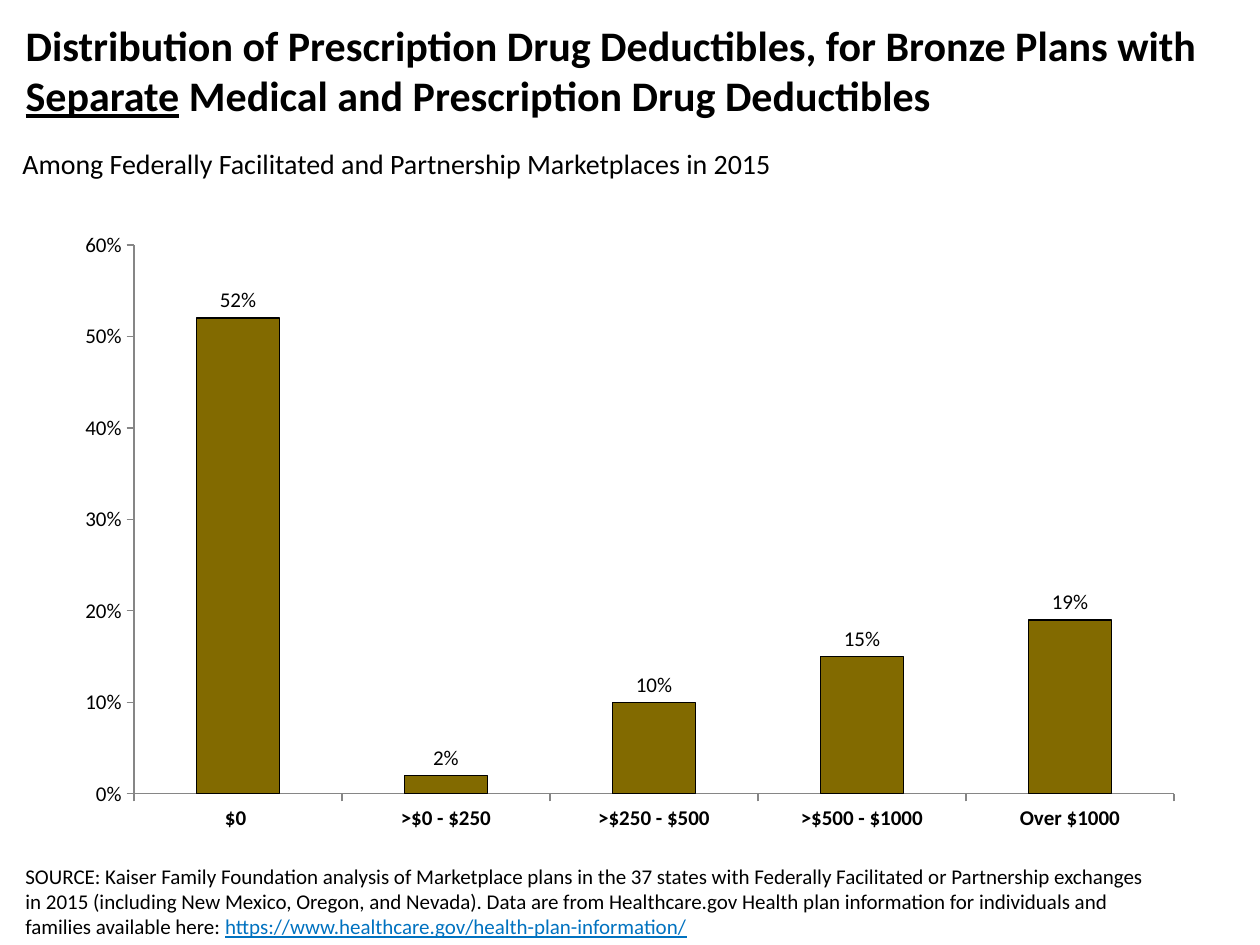
import pptx
import pptx.chart.data
import pptx.dml.color
import pptx.enum.chart
import pptx.enum.text
import pptx.oxml
import pptx.oxml.ns
import pptx.util
from dataclasses import dataclass

# Content: each text is a list of (words, style) runs
TITLE = [
    ("Distribution of Prescription Drug Deductibles, for Bronze Plans with ", ""),
    ("Separate", "underline"),
    (" Medical and Prescription Drug Deductibles", ""),
]
SUBTITLE = [("Among Federally Facilitated and Partnership Marketplaces in 2015", "")]
SOURCE = [
    ("SOURCE: Kaiser Family Foundation analysis of Marketplace plans in the 37 states "
     "with Federally Facilitated or Partnership exchanges in 2015 (including New Mexico, "
     "Oregon, and Nevada). Data are from Healthcare.gov Health plan information for "
     "individuals and families available here: ", ""),
    ("https://www.healthcare.gov/health-plan-information/", "link"),
]
DEDUCTIBLE_SHARES = {
    "$0 ": 0.52,
    ">$0 - $250": 0.02,
    ">$250 - $500": 0.10,
    ">$500 - $1000": 0.15,
    "Over $1000": 0.19,
}

# Boxes in px: left, top, width, height
SLIDE_SIZE = (1260, 945)
TITLE_BOX = (13, 13, 1235, 126)
SUBTITLE_BOX = (10, 140, 789, 47)
CHART_BOX = (63, 220, 1134, 624)
PLOT_BOX = (134, 245, 1040, 549)
SOURCE_BOX = (13, 857, 1147, 76)
EMU_PER_PX = 914400 // 126


@dataclass(frozen=True)
class Theme:
    font: str = "Calibri"
    text: str = "000000"
    link: str = "0072C0"
    bar: str = "826A00"
    axis: str = "868686"
    title_size: int = 24
    subtitle_size: int = 16
    small_size: int = 12


THEME = Theme()


def emu(box):
    return [pptx.util.Emu(length * EMU_PER_PX) for length in box]


def rgb(color):
    return pptx.dml.color.RGBColor.from_string(color)


def style_font(font, size, bold=False, color=THEME.text):
    font.name = THEME.font
    font.size = pptx.util.Pt(size)
    font.bold = bold
    font.color.rgb = rgb(color)


def write_text(shape, runs, size, bold=False, wrap=True):
    frame = shape.text_frame
    frame.word_wrap = wrap
    frame.auto_size = pptx.enum.text.MSO_AUTO_SIZE.NONE
    frame.vertical_anchor = pptx.enum.text.MSO_ANCHOR.TOP
    paragraph = frame.paragraphs[0]
    paragraph.alignment = pptx.enum.text.PP_ALIGN.LEFT
    for words, style in runs:
        run = paragraph.add_run()
        run.text = words
        style_font(run.font, size, bold, THEME.link if style == "link" else THEME.text)
        run.font.underline = bool(style)


def place_plot(chart):
    """Fix the inner plot area as fractions of the chart frame."""
    left, top, width, height = CHART_BOX
    fractions = {
        "x": (PLOT_BOX[0] - left) / width,
        "y": (PLOT_BOX[1] - top) / height,
        "w": PLOT_BOX[2] / width,
        "h": PLOT_BOX[3] / height,
    }
    settings = [("layoutTarget", "inner"), ("xMode", "edge"), ("yMode", "edge")]
    settings += [(name, f"{value:.4f}") for name, value in fractions.items()]
    children = "".join(f'<c:{name} val="{value}"/>' for name, value in settings)
    layout = pptx.oxml.parse_xml(
        f'<c:layout {pptx.oxml.ns.nsdecls("c")}>'
        f"<c:manualLayout>{children}</c:manualLayout></c:layout>")
    plot_area = chart.plots[0]._element.getparent()
    for old in plot_area.findall(pptx.oxml.ns.qn("c:layout")):
        plot_area.remove(old)
    plot_area.insert(0, layout)


def add_deductible_chart(slide):
    data = pptx.chart.data.CategoryChartData(number_format="0%")
    data.categories = list(DEDUCTIBLE_SHARES)
    data.add_series("Series 1", list(DEDUCTIBLE_SHARES.values()))
    chart = slide.shapes.add_chart(
        pptx.enum.chart.XL_CHART_TYPE.COLUMN_CLUSTERED, *emu(CHART_BOX), data).chart
    chart.has_legend = False
    chart.has_title = False
    style_font(chart.font, THEME.small_size)

    # Axes
    for axis, bold in ((chart.category_axis, True), (chart.value_axis, False)):
        axis.has_major_gridlines = False
        axis.major_tick_mark = pptx.enum.chart.XL_TICK_MARK.OUTSIDE
        axis.format.line.color.rgb = rgb(THEME.axis)
        axis.format.line.width = pptx.util.Pt(0.75)
        style_font(axis.tick_labels.font, THEME.small_size, bold)
    value_axis = chart.value_axis
    value_axis.minimum_scale, value_axis.maximum_scale = 0, 0.6
    value_axis.major_unit = 0.1
    value_axis.tick_labels.number_format = "0%"
    value_axis.tick_labels.number_format_is_linked = False

    # Bars and their labels
    plot = chart.plots[0]
    plot.gap_width = 150
    plot.vary_by_categories = False
    bars = plot.series[0]
    bars.format.fill.solid()
    bars.format.fill.fore_color.rgb = rgb(THEME.bar)
    bars.format.line.color.rgb = rgb(THEME.text)
    bars.format.line.width = pptx.util.Pt(0.75)
    labels = bars.data_labels
    labels.show_value = True
    labels.number_format = "0%"
    labels.number_format_is_linked = False
    labels.position = pptx.enum.chart.XL_LABEL_POSITION.OUTSIDE_END
    style_font(labels.font, THEME.small_size)
    place_plot(chart)


def main():
    presentation = pptx.Presentation()
    presentation.slide_width, presentation.slide_height = emu(SLIDE_SIZE)
    title_only = presentation.slide_layouts[5]
    slide = presentation.slides.add_slide(title_only)

    # Title
    title = slide.shapes.title
    title.left, title.top, title.width, title.height = emu(TITLE_BOX)
    write_text(title, TITLE, THEME.title_size, bold=True)

    # Chart, subtitle and source note
    add_deductible_chart(slide)
    subtitle = slide.shapes.add_textbox(*emu(SUBTITLE_BOX))
    write_text(subtitle, SUBTITLE, THEME.subtitle_size, wrap=False)
    source = slide.shapes.add_textbox(*emu(SOURCE_BOX))
    write_text(source, SOURCE, THEME.small_size)

    presentation.save("out.pptx")


if __name__ == "__main__":
    main()
